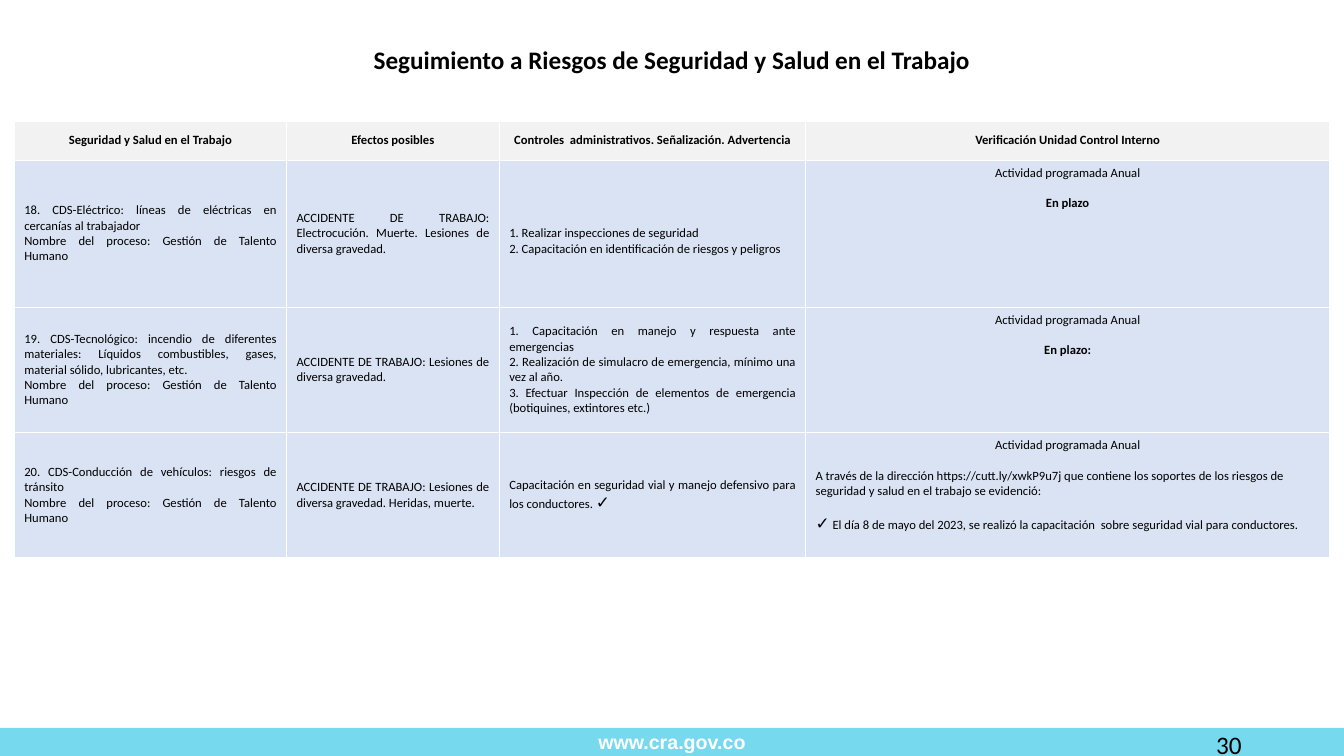
from pptx import Presentation
from pptx.dml.color import RGBColor
from pptx.enum.shapes import MSO_SHAPE
from pptx.enum.text import MSO_ANCHOR as Anchor, MSO_AUTO_SIZE as AutoSize, PP_ALIGN as Align
from pptx.util import Pt

COLORS = {
    "band": "77D9ED",
    "header": "F2F2F2",
    "body": "DAE3F3",
    "text": "000000",
    "white": "FFFFFF",
}
CHECK = "✓"
LINE = 11


def write(frame, text, first=True, size=9, bold=False, font="Calibri",
          color="text", align=Align.CENTER, before=0):
    paragraph = frame.paragraphs[0] if first else frame.add_paragraph()
    paragraph.alignment = align
    if before:
        paragraph.space_before = Pt(before)
    for piece in filter(None, text.partition(CHECK)):
        run = paragraph.add_run()
        run.text = piece
        run.font.name = "Arial" if piece == CHECK else font
        run.font.size = Pt(12 if piece == CHECK else size)
        run.font.bold = bold
        run.font.color.rgb = RGBColor.from_string(COLORS[color])


presentation = Presentation()
presentation.slide_width = Pt(960)
presentation.slide_height = Pt(540)
slide = presentation.slides.add_slide(presentation.slide_layouts[5])

footer = slide.shapes.add_shape(MSO_SHAPE.RECTANGLE, Pt(0), Pt(520), Pt(960), Pt(20))
footer.shadow.inherit = False
footer.fill.solid()
footer.fill.fore_color.rgb = RGBColor.from_string(COLORS["band"])
footer.line.fill.background()
footer.text_frame.vertical_anchor = Anchor.MIDDLE
write(footer.text_frame, "www.cra.gov.co", size=14, bold=True, font="Arial", color="white")

page_number = slide.shapes.add_textbox(Pt(678), Pt(517.5), Pt(216), Pt(29))
page_number.text_frame.word_wrap = True
write(page_number.text_frame, "30", size=18, align=Align.RIGHT)

title = slide.shapes.title
title.left, title.top, title.width, title.height = Pt(9.5), Pt(28), Pt(941), Pt(29)
title.text_frame.word_wrap = True
title.text_frame.auto_size = AutoSize.SHAPE_TO_FIT_TEXT
title.text_frame.vertical_anchor = Anchor.TOP
write(title.text_frame, "Seguimiento a Riesgos de Seguridad y Salud en el Trabajo", size=18, bold=True)

PROCESS = "Nombre del proceso: Gestión de Talento Humano "
SCHEDULE = ("Actividad programada Anual", {})
headers = [
    "Seguridad y Salud en el Trabajo",
    "Efectos posibles",
    "Controles  administrativos. Señalización. Advertencia",
    "Verificación Unidad Control Interno",
]
risks = [
    (
        "18. CDS-Eléctrico: líneas de eléctricas en cercanías al trabajador",
        "ACCIDENTE DE TRABAJO: Electrocución. Muerte. Lesiones de diversa gravedad.",
        ["1. Realizar inspecciones de seguridad",
         "2. Capacitación en identificación de riesgos y peligros"],
        [("En plazo", {"bold": True, "before": LINE})],
    ),
    (
        "19. CDS-Tecnológico: incendio de diferentes materiales: Líquidos combustibles, gases, "
        "material sólido, lubricantes, etc.",
        "ACCIDENTE DE TRABAJO: Lesiones de diversa gravedad.",
        ["1. Capacitación en manejo y respuesta ante emergencias",
         "2. Realización de simulacro de emergencia, mínimo una vez al año.",
         "3. Efectuar Inspección de elementos de emergencia (botiquines, extintores etc.)"],
        [("En plazo:", {"bold": True, "before": LINE})],
    ),
    (
        "20. CDS-Conducción de vehículos: riesgos de tránsito",
        "ACCIDENTE DE TRABAJO: Lesiones de diversa gravedad. Heridas, muerte.",
        ["Capacitación en seguridad vial y manejo defensivo para los conductores. ✓"],
        [("A través de la dirección https://cutt.ly/xwkP9u7j que contiene los soportes de los "
          "riesgos de seguridad y salud en el trabajo se evidenció:",
          {"align": Align.LEFT, "before": LINE}),
         ("✓ El día 8 de mayo del 2023, se realizó la capacitación  sobre seguridad vial "
          "para conductores.", {"align": Align.LEFT, "before": LINE})],
    ),
]

column_widths = [194.4, 152, 218.8, 374.4]
row_heights = [28, 105, 89.5, 89.5]
table = slide.shapes.add_table(
    len(row_heights), len(column_widths), Pt(10.2), Pt(86.4),
    Pt(sum(column_widths)), Pt(sum(row_heights))).table
table.horz_banding = False
for column, width in zip(table.columns, column_widths):
    column.width = Pt(width)
for row, height in zip(table.rows, row_heights):
    row.height = Pt(height)

rows = [[[(header, {"bold": True})] for header in headers]]
for risk, effect, controls, findings in risks:
    justified = [[(text, {"align": Align.JUSTIFY}) for text in texts]
                 for texts in ([risk, PROCESS], [effect], controls)]
    rows.append(justified + [[SCHEDULE] + findings])

for row_index, row in enumerate(rows):
    for column_index, paragraphs in enumerate(row):
        cell = table.cell(row_index, column_index)
        cell.fill.solid()
        cell.fill.fore_color.rgb = RGBColor.from_string(COLORS["body" if row_index else "header"])
        is_finding = row_index > 0 and column_index == 3
        cell.vertical_anchor = Anchor.TOP if is_finding else Anchor.MIDDLE
        for index, (text, style) in enumerate(paragraphs):
            write(cell.text_frame, text, first=index == 0, **style)

table.cell(1, 2).margin_top = Pt(3.6 + LINE)

presentation.save("out.pptx")
